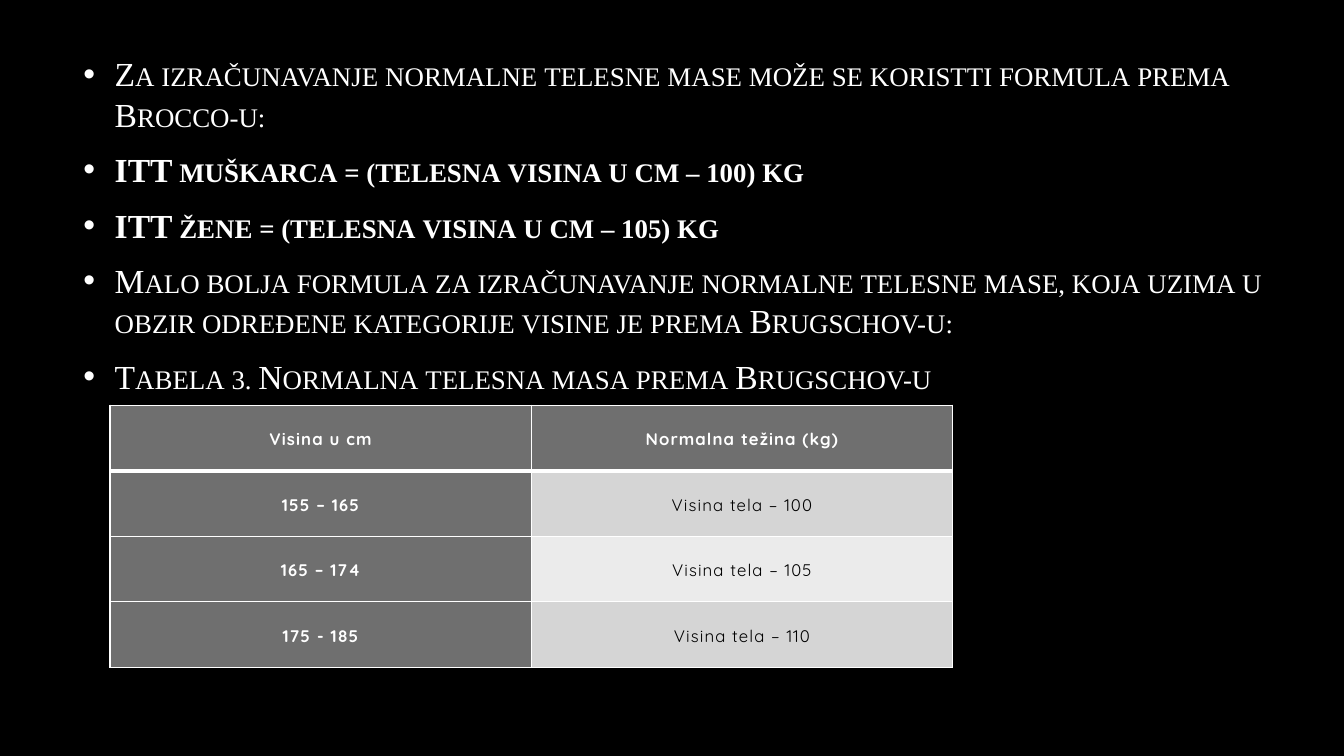
from dataclasses import dataclass

from lxml import etree
from pptx import Presentation
from pptx.dml.color import RGBColor
from pptx.enum.text import MSO_ANCHOR, PP_ALIGN
from pptx.oxml.ns import qn
from pptx.util import Inches, Pt

TOP = MSO_ANCHOR.TOP
MIDDLE = MSO_ANCHOR.MIDDLE
CENTER = PP_ALIGN.CENTER

COLORS = {
    "black": "000000",
    "white": "FFFFFF",
    "header": "6F6F6F",
    "band": "D5D5D5",
    "light_band": "EBEBEB",
}
BODY_FONT = {"name": "Times New Roman", "size": Pt(24)}
TABLE_FONT = {"name": "Quicksand", "size": Pt(12)}
BODY_FRAME = {"word_wrap": True, "vertical_anchor": TOP, "margin_top": Inches(0.02)}
BODY_PARAGRAPH = {"space_before": Pt(4.8), "space_after": Pt(6)}
CELL_FORMAT = {
    "vertical_anchor": MIDDLE,
    "margin_left": Inches(0.07),
    "margin_right": Inches(0.07),
    "margin_top": 0,
    "margin_bottom": 0,
}
CELL_PARAGRAPH = {"alignment": CENTER, "line_spacing": 1.15}
BULLET_INDENT = Inches(0.31)
COLUMN_WIDTH = Inches(4.18)
ROW_HEIGHT = Inches(0.65)


@dataclass
class Bullet:
    text: str
    bold: bool = False


@dataclass
class HeightRow:
    height: str
    weight: str
    weight_fill: str
    is_header: bool = False


BULLETS = [
    Bullet("Za izračunavanje normalne telesne mase može se koristti formula prema Brocco-u:"),
    Bullet("ITT muškarca = (telesna visina u cm – 100) kg", True),
    Bullet("ITT žene = (telesna visina u cm – 105) kg", True),
    Bullet(
        "Malo bolja formula za izračunavanje normalne telesne mase, koja uzima u "
        "obzir određene kategorije visine je prema Brugschov-u:"
    ),
    Bullet("Tabela 3. Normalna telesna masa prema Brugschov-u"),
]
ROWS = [
    HeightRow("Visina u cm", "Normalna težina (kg)", "header", True),
    HeightRow("155 – 165", "Visina tela – 100", "band"),
    HeightRow("165 – 174", "Visina tela – 105", "light_band"),
    HeightRow("175 - 185", "Visina tela – 110", "band"),
]


def apply_format(target: object, values: dict) -> None:
    for name, value in values.items():
        setattr(target, name, value)


def add_text(paragraph, text: str, font: dict, color: str, bold: bool):
    run = paragraph.add_run()
    run.text = text
    apply_format(run.font, {**font, "bold": bold})
    run.font.color.rgb = RGBColor.from_string(COLORS[color])
    return run


def add_bullet_mark(paragraph) -> None:
    properties = paragraph._p.get_or_add_pPr()
    properties.set("marL", str(BULLET_INDENT))
    properties.set("indent", str(-BULLET_INDENT))
    mark_color = etree.SubElement(properties, qn("a:buClr"))
    etree.SubElement(mark_color, qn("a:srgbClr"), val=COLORS["white"])
    etree.SubElement(properties, qn("a:buFont"), typeface="Arial")
    etree.SubElement(properties, qn("a:buChar"), char="•")


def add_bullets(slide, bullets: list[Bullet]) -> None:
    text_box = slide.shapes.add_textbox(Inches(0.73), Inches(0.51), Inches(11.94), Inches(3.86))
    frame = text_box.text_frame
    apply_format(frame, BODY_FRAME)
    for index, bullet in enumerate(bullets):
        paragraph = frame.add_paragraph() if index else frame.paragraphs[0]
        apply_format(paragraph, BODY_PARAGRAPH)
        if index == 0:
            paragraph.space_before = Pt(0)
        add_bullet_mark(paragraph)
        run = add_text(paragraph, bullet.text, BODY_FONT, "white", bullet.bold)
        run.font._element.set("cap", "small")


def set_borders(cell, widths: dict[str, float]) -> None:
    properties = cell._tc.get_or_add_tcPr()
    for index, (side, width) in enumerate(widths.items()):
        line = etree.Element(qn(f"a:{side}"), w=str(Pt(width)))
        fill = etree.SubElement(line, qn("a:solidFill"))
        etree.SubElement(fill, qn("a:srgbClr"), val=COLORS["white"])
        properties.insert(index, line)


def fill_cell(cell, text: str, fill: str, color: str, bold: bool) -> None:
    apply_format(cell, CELL_FORMAT)
    cell.fill.solid()
    cell.fill.fore_color.rgb = RGBColor.from_string(COLORS[fill])
    paragraph = cell.text_frame.paragraphs[0]
    apply_format(paragraph, CELL_PARAGRAPH)
    run = add_text(paragraph, text, TABLE_FONT, color, bold)
    run.font._element.set("spc", "80")


def add_height_table(slide, rows: list[HeightRow]) -> None:
    table = slide.shapes.add_table(
        len(rows), 2, Inches(1.09), Inches(4.02), COLUMN_WIDTH * 2, ROW_HEIGHT * len(rows)
    ).table
    for column in table.columns:
        column.width = COLUMN_WIDTH
    for index, row in enumerate(rows):
        table.rows[index].height = ROW_HEIGHT
        height_cell, weight_cell = table.cell(index, 0), table.cell(index, 1)
        fill_cell(height_cell, row.height, "header", "white", True)
        weight_color = "white" if row.is_header else "black"
        fill_cell(weight_cell, row.weight, row.weight_fill, weight_color, row.is_header)
        top_width = 3 if index and rows[index - 1].is_header else 1
        bottom_width = 3 if row.is_header else 1
        for cell in (height_cell, weight_cell):
            set_borders(cell, {"lnL": 1, "lnR": 1, "lnT": top_width, "lnB": bottom_width})


def main() -> None:
    presentation = Presentation()
    presentation.slide_width = Inches(13.33)
    presentation.slide_height = Inches(7.5)
    slide = presentation.slides.add_slide(presentation.slide_layouts[6])
    slide.background.fill.solid()
    slide.background.fill.fore_color.rgb = RGBColor.from_string(COLORS["black"])
    add_bullets(slide, BULLETS)
    add_height_table(slide, ROWS)
    presentation.save("out.pptx")


if __name__ == "__main__":
    main()
